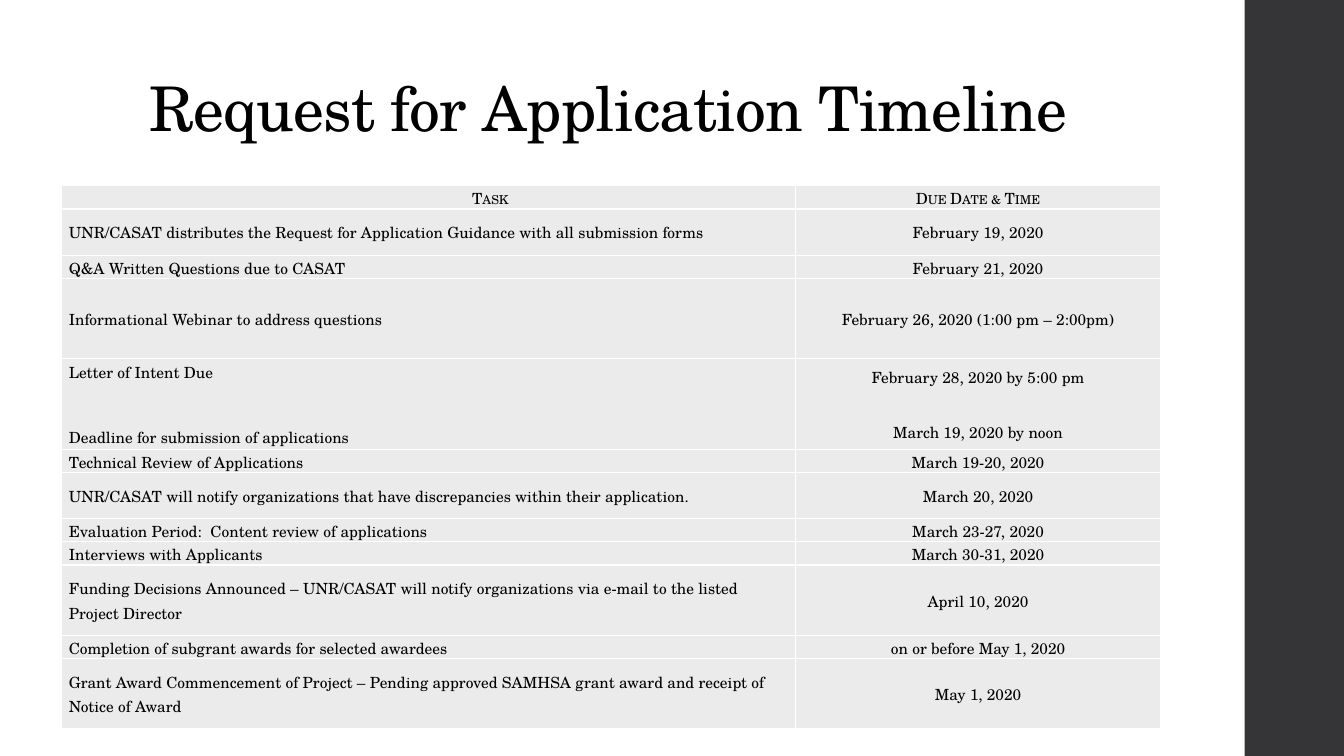
from pptx import Presentation
from pptx import util as u
from pptx.dml.color import RGBColor
from pptx.enum import shapes, text
from pptx.oxml import parse_xml
from pptx.oxml.ns import nsdecls

TITLE = "Request for Application Timeline"
HEADER = ("Task", "Due Date & Time")
# Row height, tasks, due dates
TIMELINE = [
    (33, ["UNR/CASAT distributes the Request for Application Guidance with all submission forms"],
     ["February 19, 2020"]),
    (16.6, ["Q&A Written Questions due to CASAT"], ["February 21, 2020"]),
    (57, ["Informational Webinar to address questions"], ["February 26, 2020 (1:00 pm – 2:00pm)"]),
    (65, ["Letter of Intent Due", "Deadline for submission of applications"],
     ["February 28, 2020 by 5:00 pm", "March 19, 2020 by noon"]),
    (16.6, ["Technical Review of Applications"], ["March 19-20, 2020"]),
    (33, ["UNR/CASAT will notify organizations that have discrepancies within their application."],
     ["March 20, 2020"]),
    (16.6, ["Evaluation Period:  Content review of applications"], ["March 23-27, 2020"]),
    (16.6, ["Interviews with Applicants"], ["March 30-31, 2020"]),
    (50.2, ["Funding Decisions Announced – UNR/CASAT will notify organizations via e-mail "
            "to the listed Project Director"], ["April 10, 2020"]),
    (16.6, ["Completion of subgrant awards for selected awardees"], ["on or before May 1, 2020"]),
    (50.2, ["Grant Award Commencement of Project – Pending approved SAMHSA grant award "
            "and receipt of Notice of Award"], ["May 1, 2020"]),
]
HEADER_HEIGHT = 16.6
COLUMN_WIDTHS = (524.2, 260.6)
COLUMN_ALIGN = (text.PP_ALIGN.LEFT, text.PP_ALIGN.CENTER)
SECOND_ITEM_GAP = (26, 19)
TASK_HEADER_INDENT = 88
FONT = "TeX Gyre Schola"
COLORS = {"ink": "000000", "band": "353537", "cell": "EBEBEB", "border": "FFFFFF"}


def rgb(name):
    return RGBColor.from_string(COLORS[name])


def style_font(para, size):
    for span in para.runs:
        span.font.name = FONT
        span.font.size = u.Pt(size)
        span.font.color.rgb = rgb("ink")


def add_side_band(page):
    band = page.shapes.add_shape(shapes.MSO_SHAPE.RECTANGLE, u.Pt(889), 0, u.Pt(71), u.Pt(540))
    band.shadow.inherit = False
    band.fill.solid()
    band.fill.fore_color.rgb = rgb("band")
    band.line.fill.background()


def add_title(page):
    box = page.shapes.add_textbox(u.Pt(99.4), u.Pt(28.8), u.Pt(763), u.Pt(77.8))
    frame = box.text_frame
    frame.word_wrap = True
    frame.vertical_anchor = text.MSO_ANCHOR.BOTTOM
    frame.text = TITLE
    para = frame.paragraphs[0]
    para.line_spacing = 0.9
    style_font(para, 44)
    para.runs[0].font._element.set("spc", "-50")


def add_borders(cell):
    properties = cell._tc.get_or_add_tcPr()
    for position, side in enumerate(("lnL", "lnR", "lnT", "lnB")):
        properties.insert(position, parse_xml(
            f'<a:{side} {nsdecls("a")} w="12700"><a:solidFill>'
            f'<a:srgbClr val="{COLORS["border"]}"/></a:solidFill></a:{side}>'))


def fill_cell(cell, lines, align, space, second_gap):
    cell.margin_left = cell.margin_right = u.Pt(5)
    cell.margin_top = cell.margin_bottom = 0
    cell.vertical_anchor = text.MSO_ANCHOR.MIDDLE
    cell.fill.solid()
    cell.fill.fore_color.rgb = rgb("cell")
    add_borders(cell)
    cell.text_frame.text = "\n".join(lines)
    for number, para in enumerate(cell.text_frame.paragraphs):
        para.alignment = align
        para.line_spacing = 1.07
        para.space_before = u.Pt(second_gap if number else space)
        para.space_after = u.Pt(space)
        style_font(para, 11)


def add_timeline(page):
    heights = [HEADER_HEIGHT] + [height for height, _, _ in TIMELINE]
    table = page.shapes.add_table(len(heights), 2, u.Pt(44.2), u.Pt(132.7),
                                  u.Pt(sum(COLUMN_WIDTHS)), u.Pt(sum(heights))).table
    table.first_row = table.horz_banding = False
    for column, width in zip(table.columns, COLUMN_WIDTHS):
        column.width = u.Pt(width)
    for row, height in zip(table.rows, heights):
        row.height = u.Pt(height)

    for column, label in enumerate(HEADER):
        cell = table.cell(0, column)
        fill_cell(cell, [label], text.PP_ALIGN.CENTER, 0, 0)
        cell.text_frame.paragraphs[0].runs[0].font._element.set("cap", "small")
    task_header = table.cell(0, 0).text_frame.paragraphs[0]
    task_header._p.get_or_add_pPr().set("marL", str(u.Pt(TASK_HEADER_INDENT)))

    for row, (_, *columns) in enumerate(TIMELINE, start=1):
        for column, lines in enumerate(columns):
            fill_cell(table.cell(row, column), lines, COLUMN_ALIGN[column], 3,
                      SECOND_ITEM_GAP[column])


def main():
    deck = Presentation()
    deck.slide_width, deck.slide_height = u.Pt(960), u.Pt(540)
    page = deck.slides.add_slide(deck.slide_layouts[6])
    add_side_band(page)
    add_title(page)
    add_timeline(page)
    deck.save("out.pptx")


if __name__ == "__main__":
    main()
